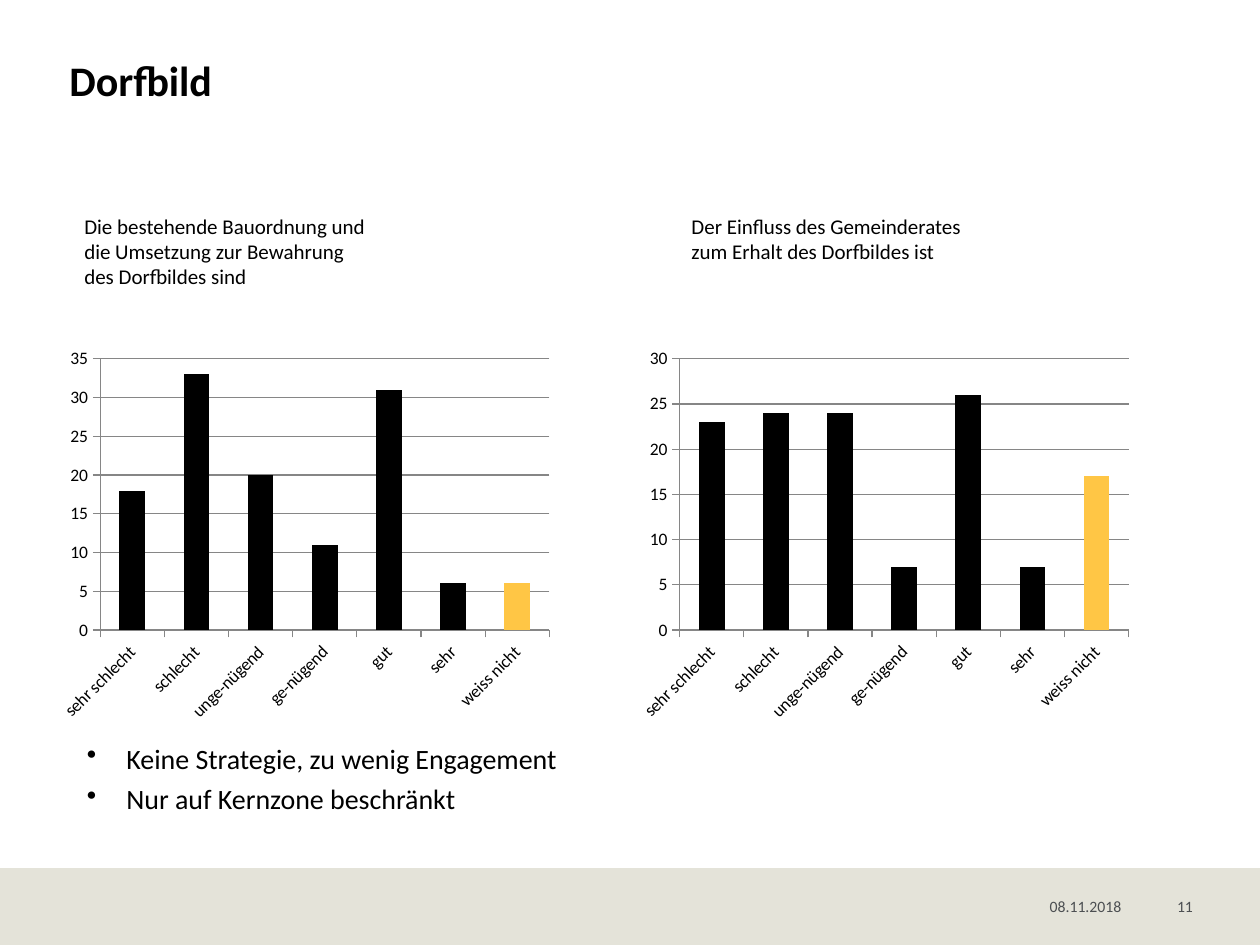
import dataclasses

import pptx
import pptx.chart.data
import pptx.dml.color
import pptx.enum.chart
import pptx.enum.shapes
import pptx.enum.text
import pptx.oxml
import pptx.oxml.ns
import pptx.util

Cm = pptx.util.Cm
Pt = pptx.util.Pt
Align = pptx.enum.text.PP_ALIGN
Anchor = pptx.enum.text.MSO_ANCHOR


@dataclasses.dataclass(frozen=True)
class Theme:
    font: str = "Calibri"
    ink: str = "000000"
    muted: str = "4C4F52"
    band: str = "E4E3D9"
    accent: str = "FFC645"
    grid: str = "868686"
    title_size: int = 24
    bullet_size: int = 16
    question_size: int = 12
    chart_size: int = 10
    footer_size: int = 9


def rgb(value):
    return pptx.dml.color.RGBColor.from_string(value)


def format_font(font, theme, size, color=None, bold=False):
    font.name = theme.font
    font.size = Pt(size)
    font.bold = bold
    font.color.rgb = rgb(color or theme.ink)


def write_text(frame, text, *, theme, size, color=None, bold=False, align=Align.LEFT,
               anchor=Anchor.TOP, inset=(0, 0), bullet=None, gap=0):
    frame.word_wrap = True
    frame.auto_size = pptx.enum.text.MSO_AUTO_SIZE.NONE
    frame.vertical_anchor = anchor
    frame.margin_left = frame.margin_right = Cm(inset[0])
    frame.margin_top = frame.margin_bottom = Cm(inset[1])
    for index, line in enumerate(text.split("\n")):
        para = frame.add_paragraph() if index else frame.paragraphs[0]
        para.alignment = align
        para.space_before = Pt(gap if index else 0)
        if bullet:
            props = para._p.get_or_add_pPr()
            props.set("marL", str(Cm(0.8)))
            props.set("indent", str(-Cm(0.8)))
            mark = pptx.oxml.parse_xml(
                f'<a:buChar {pptx.oxml.ns.nsdecls("a")} char="{bullet}"/>')
            props.append(mark)
        span = para.add_run()
        span.text = line
        format_font(span.font, theme, size, color, bold)


class Page:
    """Holds the theme and the current slide and adds its elements."""

    def __init__(self, deck, theme):
        self.theme = theme
        self.slide = deck.slides.add_slide(deck.slide_layouts[5])

    def band(self, left, top, width, height):
        band = self.slide.shapes.add_shape(
            pptx.enum.shapes.MSO_SHAPE.RECTANGLE, Cm(left), Cm(top), Cm(width), Cm(height))
        band.shadow.inherit = False
        band.fill.solid()
        band.fill.fore_color.rgb = rgb(self.theme.band)
        band.line.fill.background()

    def title(self, text, left, top, width, height):
        title = self.slide.shapes.title
        title.left, title.top, title.width, title.height = map(Cm, (left, top, width, height))
        write_text(title.text_frame, text, theme=self.theme, size=self.theme.title_size,
                   bold=True)

    def text(self, text, left, top, width, height, **style):
        box = self.slide.shapes.add_textbox(Cm(left), Cm(top), Cm(width), Cm(height))
        write_text(box.text_frame, text, theme=self.theme, **style)

    def columns(self, categories, values, top_value, left, top, width, height):
        data = pptx.chart.data.CategoryChartData()
        data.categories = categories
        data.add_series("Series 1", values)
        chart = self.slide.shapes.add_chart(
            pptx.enum.chart.XL_CHART_TYPE.COLUMN_CLUSTERED,
            Cm(left), Cm(top), Cm(width), Cm(height), data).chart
        chart.has_legend = chart.has_title = False
        format_font(chart.font, self.theme, self.theme.chart_size)
        plot = chart.plots[0]
        plot.gap_width = 150
        plot.vary_by_categories = False
        series = plot.series[0]
        last = series.points[len(values) - 1]
        for target, color in ((series, self.theme.ink), (last, self.theme.accent)):
            target.format.fill.solid()
            target.format.fill.fore_color.rgb = rgb(color)
        scale = chart.value_axis
        scale.minimum_scale, scale.maximum_scale, scale.major_unit = 0, top_value, 5
        scale.has_major_gridlines = True
        for axis in (chart.category_axis, scale):
            axis.major_tick_mark = pptx.enum.chart.XL_TICK_MARK.OUTSIDE
            format_font(axis.tick_labels.font, self.theme, self.theme.chart_size)
        chart.category_axis._element.txPr.bodyPr.set("rot", str(-45 * 60000))
        for part in (chart.category_axis, scale, scale.major_gridlines):
            part.format.line.color.rgb = rgb(self.theme.grid)
            part.format.line.width = Pt(0.75)


def main():
    theme = Theme()
    deck = pptx.Presentation()
    deck.slide_width, deck.slide_height = Cm(25.4), Cm(19.05)
    page = Page(deck, theme)
    page.band(0, 17.5, 25.4, 1.55)
    page.title("Dorfbild", 1.4, 1.09, 22.63, 1.02)

    footer = dict(size=theme.footer_size, color=theme.muted, anchor=Anchor.BOTTOM)
    page.text("08.11.2018", 21.16, 17.6, 1.8, 0.86, **footer)
    page.text("11", 22.96, 17.6, 1.09, 0.86, align=Align.RIGHT, **footer)

    ratings = ["sehr schlecht", "schlecht", "unge-nügend", "ge-nügend", "gut", "sehr",
               "weiss nicht"]
    surveys = [
        ("Die bestehende Bauordnung und die Umsetzung zur Bewahrung des Dorfbildes sind",
         1.45, 1.8, 1.02, [18, 33, 20, 11, 31, 6, 6], 35),
        ("Der Einfluss des Gemeinderates zum Erhalt des Dorfbildes ist",
         13.69, 1.27, 12.7, [23, 24, 24, 7, 26, 7, 17], 30),
    ]
    for question, text_left, text_height, chart_left, values, top_value in surveys:
        page.text(question, text_left, 4.17, 6.35, text_height,
                  size=theme.question_size, inset=(0.25, 0.13))
        page.columns(ratings, values, top_value, chart_left, 6.88, 10.26, 7.82)

    page.text("Keine Strategie, zu wenig Engagement\nNur auf Kernzone beschränkt",
              1.75, 14.94, 22.63, 1.6, size=theme.bullet_size, bullet="•", gap=4)
    deck.save("out.pptx")


if __name__ == "__main__":
    main()
